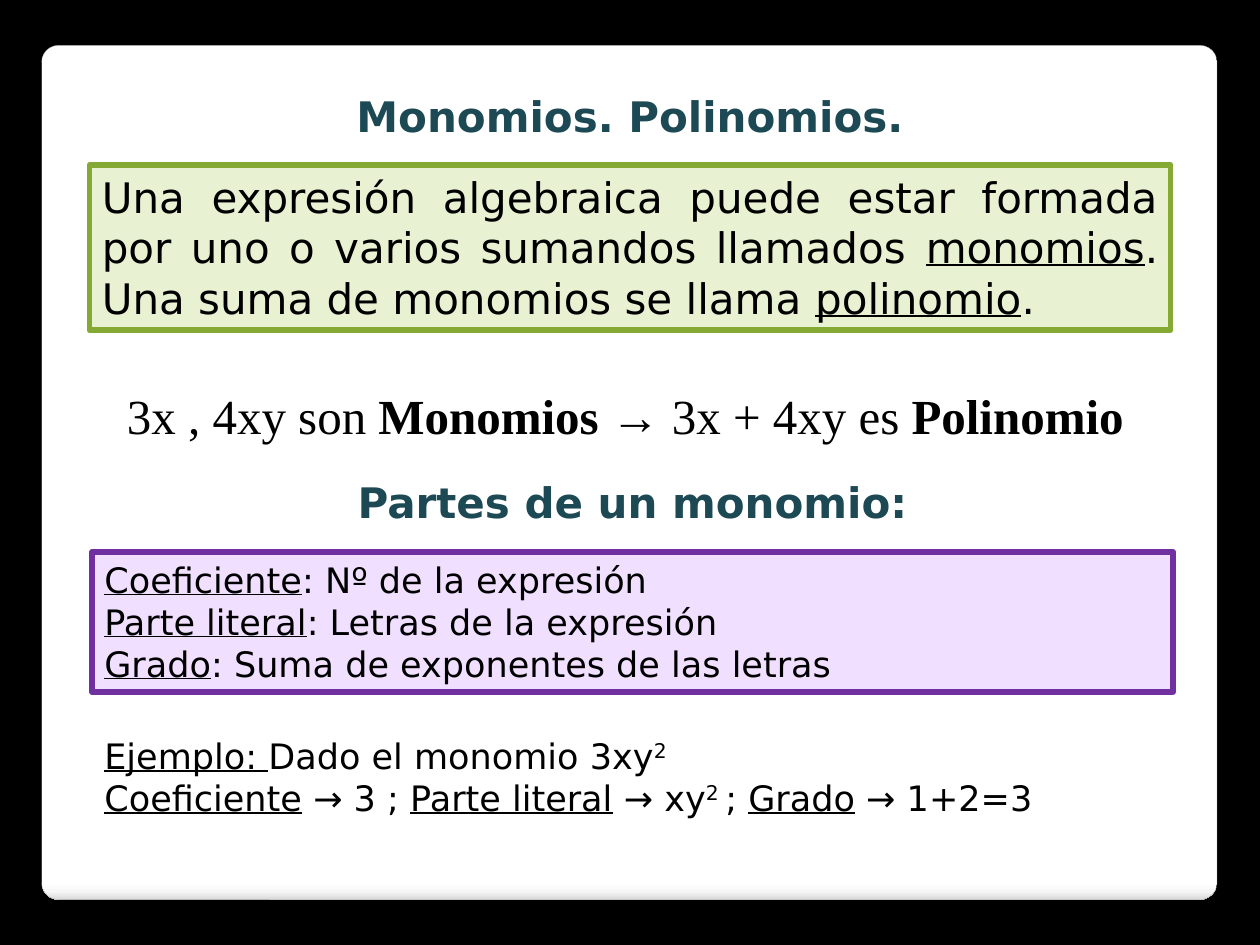
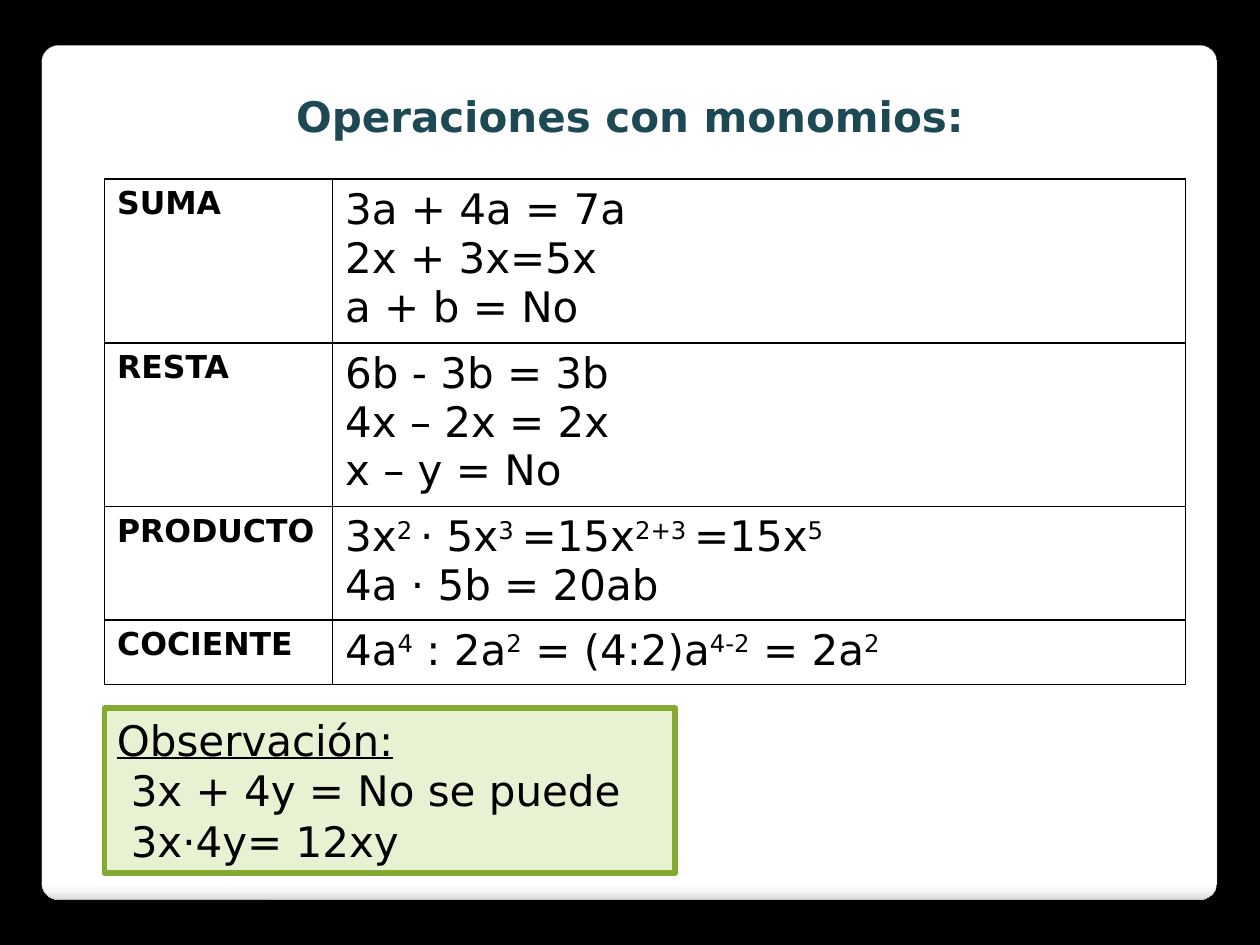
from lxml.etree import SubElement
from pptx import Presentation
from pptx.dml.color import RGBColor
from pptx.enum.shapes import MSO_SHAPE
from pptx.enum.text import PP_ALIGN
from pptx.oxml.ns import qn
from pptx.util import Inches, Pt

SANS = "DejaVu Sans"
SERIF = "Times New Roman"
BLACK = "000000"
TITLE = "1C4954"
GREEN = ("E8F2D3", "84AA33")
PURPLE = ("F1DFFF", "7030A0")
PANEL_STOPS = ((0, "FFFFFF"), (98, "FFFFFF"), (99, "F7F7F7"), (100, "DADADA"))
MARKS = "_*^"

OPERATIONS = (
    ("SUMA", ("3a + 4a = 7a", "2x + 3x=5x", "a + b = No")),
    ("RESTA", ("6b - 3b = 3b", "4x – 2x = 2x", "x – y = No")),
    ("PRODUCTO", ("3x^2 ^⋅ 5x^3 ^=15x^2+3 ^=15x^5^", "4a ⋅ 5b = 20ab")),
    ("COCIENTE", ("4a^4^ : 2a^2^ = (4:2)a^4-2^ = 2a^2^",)),
)


def color(value):
    """Turn a hex string into a colour."""
    return RGBColor.from_string(value)


def add_span(para, text, active):
    """Add a run: _ underlines, * makes bold and ^ raises."""
    if not text:
        return
    span = para.add_run()
    span.text = text
    if "_" in active:
        span.font.underline = True
    if "*" in active:
        span.font.bold = True
    if "^" in active:
        span.font._element.set("baseline", "30000")


def write(frame, lines, size, font=SANS, ink=BLACK, bold=None, align=PP_ALIGN.LEFT):
    """Fill a text frame with marked-up lines and return its paragraphs."""
    frame.word_wrap = True
    for index, line in enumerate(lines):
        para = frame.add_paragraph() if index else frame.paragraphs[0]
        para.alignment = align
        para.font.name = font
        para.font.size = Pt(size)
        para.font.bold = bold
        para.font.color.rgb = color(ink)
        text, active = "", set()
        for letter in line:
            if letter in MARKS:
                add_span(para, text, active)
                text = ""
                active ^= {letter}
            else:
                text += letter
        add_span(para, text, active)
    return frame.paragraphs


def add_text(page, box, lines, size, scheme=None, **style):
    """Place a text box, framed and filled when a scheme is given."""
    shape = page.shapes.add_textbox(*map(Inches, box))
    if scheme:
        fill, line = scheme
        shape.fill.solid()
        shape.fill.fore_color.rgb = color(fill)
        shape.line.color.rgb = color(line)
        shape.line.width = Pt(3.35)
    return write(shape.text_frame, lines, size, **style)


def add_heading(page, left, top, text):
    """Place a centred heading."""
    add_text(page, (left, top, 9.22, 0.5), [text], 24, ink=TITLE, bold=True, align=PP_ALIGN.CENTER)


def add_panel(page, box):
    """Draw the rounded white panel behind the content."""
    panel = page.shapes.add_shape(MSO_SHAPE.ROUNDED_RECTANGLE, *map(Inches, box))
    panel.adjustments[0] = 0.02
    panel.shadow.inherit = False
    panel.line.color.rgb = color("A4A4A4")
    panel.line.width = Pt(0.16)
    panel.fill.gradient()
    panel.fill.gradient_angle = 270
    stops = next(panel._element.iter(qn("a:gsLst")))
    stops.clear()
    for position, value in PANEL_STOPS:
        stop = SubElement(stops, qn("a:gs"), pos=str(position * 1000))
        SubElement(stop, qn("a:srgbClr"), val=value)


def add_page(deck, title):
    """Add a page with its panel and title."""
    page = deck.slides.add_slide(deck.slide_layouts[6])
    add_panel(page, (0.33, 0.36, 9.33, 6.78))
    add_heading(page, 0.39, 0.67, title)
    return page


def style_cell(cell):
    """Give a cell thin black borders and no fill."""
    properties = cell._tc.get_or_add_tcPr()
    for side in ("lnL", "lnR", "lnT", "lnB"):
        border = SubElement(properties, qn(f"a:{side}"), w=str(Pt(1)))
        SubElement(SubElement(border, qn("a:solidFill")), qn("a:srgbClr"), val=BLACK)
    cell.fill.background()


def add_operations(page, box):
    """Place the table of operations, each row as tall as its lines."""
    table = page.shapes.add_table(len(OPERATIONS), 2, *map(Inches, box)).table
    table.first_row = table.horz_banding = False
    label_width = 1.81
    table.columns[0].width = Inches(label_width)
    table.columns[1].width = Inches(box[2] - label_width)
    for row, (name, examples) in zip(table.rows, OPERATIONS):
        row.height = Inches(0.39 * len(examples) + 0.12)
        label, content = row.cells
        write(label.text_frame, [name], 18, bold=True)
        write(content.text_frame, examples, 24, bold=False)
        style_cell(label)
        style_cell(content)


def build_definitions(deck):
    """Build the page on monomials and their parts."""
    page = add_page(deck, "Monomios. Polinomios.")
    add_text(page, (0.71, 1.31, 8.58, 1.31), [
        "Una expresión algebraica puede estar formada por uno o varios sumandos "
        "llamados _monomios_. Una suma de monomios se llama _polinomio_.",
    ], 24, GREEN, align=PP_ALIGN.JUSTIFY)
    add_text(page, (0.91, 3.01, 8.23, 0.57), [
        "3x , 4xy son *Monomios *→ 3x + 4xy es *Polinomio*",
    ], 28, font=SERIF)
    add_heading(page, 0.41, 3.73, "Partes de un monomio:")
    add_text(page, (0.73, 4.38, 8.58, 1.11), [
        "_Coeficiente_: Nº de la expresión",
        "_Parte literal_: Letras de la expresión",
        "_Grado_: Suma de exponentes de las letras",
    ], 20, PURPLE)
    add_text(page, (0.73, 5.78, 8.58, 0.77), [
        "_Ejemplo: _Dado el monomio 3xy^2^",
        "_Coeficiente_ → 3 ; _Parte literal_ → xy^2 ^; _Grado_ → 1+2=3",
    ], 20)


def build_operations(deck):
    """Build the page on operations with monomials."""
    page = add_page(deck, "Operaciones con monomios:")
    add_operations(page, (0.83, 1.42, 8.58, 4))
    paras = add_text(page, (0.83, 5.62, 4.53, 1.31), [
        "_Observación:_",
        "3x + 4y = No se puede",
        "3x⋅4y= 12xy",
    ], 24, GREEN)
    for para in paras[1:]:
        para._p.get_or_add_pPr().set("marL", str(Inches(0.11)))


def main():
    """Build and save the deck."""
    deck = Presentation()
    deck.slide_width, deck.slide_height = Inches(10), Inches(7.5)
    backdrop = deck.slide_master.background.fill
    backdrop.solid()
    backdrop.fore_color.rgb = color(BLACK)
    build_definitions(deck)
    build_operations(deck)
    deck.save("out.pptx")


if __name__ == "__main__":
    main()
